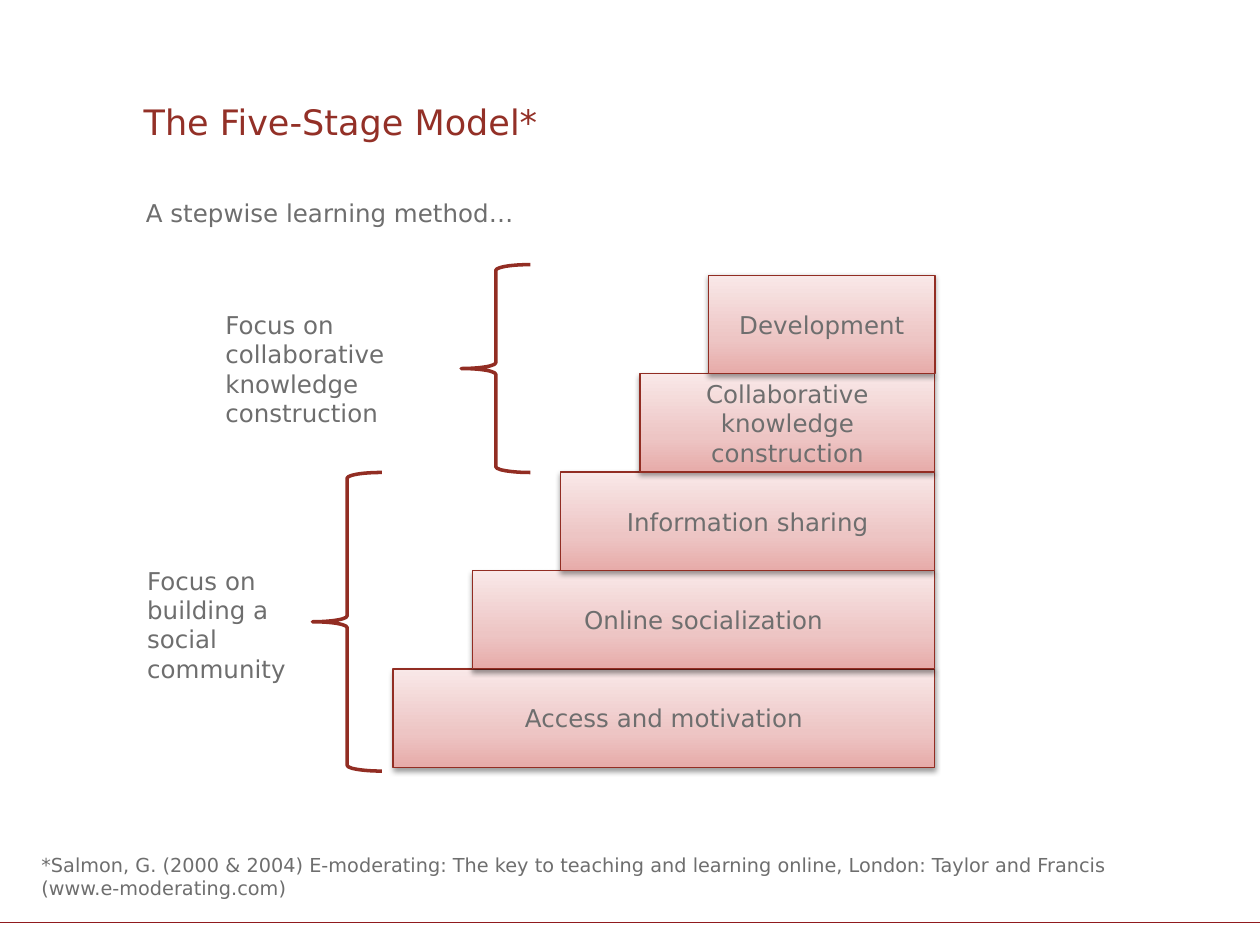
from dataclasses import dataclass

from lxml.etree import SubElement
from pptx import Presentation
from pptx.dml.color import RGBColor
from pptx.enum.shapes import MSO_CONNECTOR, MSO_SHAPE
from pptx.enum.text import MSO_ANCHOR, MSO_AUTO_SIZE, PP_ALIGN
from pptx.oxml import parse_xml
from pptx.oxml.ns import nsdecls, qn
from pptx.util import Inches, Pt


@dataclass(frozen=True)
class Theme:
    font: str = "DejaVu Sans"
    title: str = "933027"
    text: str = "6E6E6E"
    outline: str = "922D23"
    rule: str = "901A1E"
    gradient: tuple = ((0, "E7ABA9"), (35, "EDC5C4"), (100, "F9E8E8"))
    title_size: int = 20
    body_size: int = 14
    note_size: int = 11
    thin: float = 0.75
    thick: float = 2


class StepPage:
    """Places elements on a grid of 100 columns by 75 rows."""

    def __init__(self, deck, theme):
        self.theme = theme
        self.page = deck.slides.add_slide(deck.slide_layouts[5])
        self.column = deck.slide_width / 100
        self.row = deck.slide_height / 75

    def place(self, left, top, width, height):
        return (round(left * self.column), round(top * self.row),
                round(width * self.column), round(height * self.row))

    def group(self):
        return self.page.shapes.add_group_shape().shapes

    def set_text(self, frame, text, size, color, align=PP_ALIGN.LEFT):
        para = frame.paragraphs[0]
        para.text = text
        para.alignment = align
        para.font.name = self.theme.font
        para.font.size = Pt(size)
        para.font.color.rgb = RGBColor.from_string(color)

    def outline(self, line, color, width):
        line.color.rgb = RGBColor.from_string(color)
        line.width = Pt(width)

    def title(self, text, *area):
        box = self.page.shapes.title
        box.left, box.top, box.width, box.height = self.place(*area)
        frame = box.text_frame
        frame.vertical_anchor = MSO_ANCHOR.BOTTOM
        frame.margin_left = frame.margin_right = 0
        frame.margin_top = frame.margin_bottom = 0
        self.set_text(frame, text, self.theme.title_size, self.theme.title)

    def label(self, text, *area, size=None, wrap=True, shapes=None):
        shapes = self.page.shapes if shapes is None else shapes
        frame = shapes.add_textbox(*self.place(*area)).text_frame
        frame.word_wrap = wrap
        frame.auto_size = MSO_AUTO_SIZE.SHAPE_TO_FIT_TEXT
        self.set_text(frame, text, size or self.theme.body_size, self.theme.text)

    def rule(self, row):
        left, top, width, _ = self.place(0, row, 100, 0)
        line = self.page.shapes.add_connector(
            MSO_CONNECTOR.STRAIGHT, left + width, top, left, top)
        self.outline(line.line, self.theme.rule, self.theme.thin)
        SubElement(line._element.spPr, qn("a:effectLst"))

    def step(self, shapes, text, *area):
        box = shapes.add_shape(MSO_SHAPE.RECTANGLE, *self.place(*area))
        self.outline(box.line, self.theme.outline, self.theme.thin)
        properties = box._element.spPr
        # Gradient rising from dark to light
        stops = "".join(
            f'<a:gs pos="{share * 1000}"><a:srgbClr val="{color}"/></a:gs>'
            for share, color in self.theme.gradient)
        properties.find(qn("a:ln")).addprevious(parse_xml(
            f'<a:gradFill {nsdecls("a")} rotWithShape="1"><a:gsLst>{stops}</a:gsLst>'
            '<a:lin ang="16200000" scaled="0"/></a:gradFill>'))
        # Soft shadow below
        properties.append(parse_xml(
            f'<a:effectLst {nsdecls("a")}><a:outerShdw blurRad="{Pt(3.1)}" '
            f'dist="{Pt(1.6)}" dir="5400000" rotWithShape="0">'
            '<a:srgbClr val="000000"><a:alpha val="38000"/></a:srgbClr>'
            '</a:outerShdw></a:effectLst>'))
        box.text_frame.word_wrap = True
        box.text_frame.vertical_anchor = MSO_ANCHOR.MIDDLE
        self.set_text(box.text_frame, text, self.theme.body_size,
                      self.theme.text, PP_ALIGN.CENTER)

    def brace(self, shapes, *area):
        mark = shapes.add_shape(MSO_SHAPE.LEFT_BRACE, *self.place(*area))
        mark.shadow.inherit = False
        mark.fill.background()
        self.outline(mark.line, self.theme.outline, self.theme.thick)


def main():
    deck = Presentation()
    deck.slide_width, deck.slide_height = Inches(10), Inches(7.5)
    theme = Theme()
    page = StepPage(deck, theme)

    # Frame, heading and source note
    page.rule(73.2)
    page.title("The Five-Stage Model*", 11.4, 5, 71.9, 6.3)
    page.label("A stepwise learning method…", 10.6, 15.2, 31.6, 5.7, wrap=False)
    page.label("*Salmon, G. (2000 & 2004) E-moderating: The key to teaching and "
               "learning online, London: Taylor and Francis (www.e-moderating.com)",
               2.3, 67.2, 86.7, 4.7, size=theme.note_size)

    # Staircase from the bottom step up, flush right
    right, bottom, rise = 74.2, 60.9, 7.81
    steps = [
        ("Access and motivation", 31.2),
        ("Online socialization", 37.5),
        ("Information sharing", 44.5),
        ("Collaborative knowledge construction", 50.8),
        ("Development", 56.25),
    ]
    stairs = page.group()
    for level, (text, left) in enumerate(steps, start=1):
        page.step(stairs, text, left, bottom - level * rise, right - left, rise)

    # Braces with their focus labels
    focuses = [
        ("Focus on building a social community", 10.7, 44.4, 24.8, 37.5, 23.7),
        ("Focus on collaborative knowledge construction", 16.9, 24.1, 36.6, 21, 16.5),
    ]
    for text, left, top, brace_left, brace_top, brace_height in focuses:
        shapes = page.group()
        page.brace(shapes, brace_left, brace_top, 5.5, brace_height)
        page.label(text, left, top, 15.6, 10.4, shapes=shapes)

    deck.save("out.pptx")


if __name__ == "__main__":
    main()
